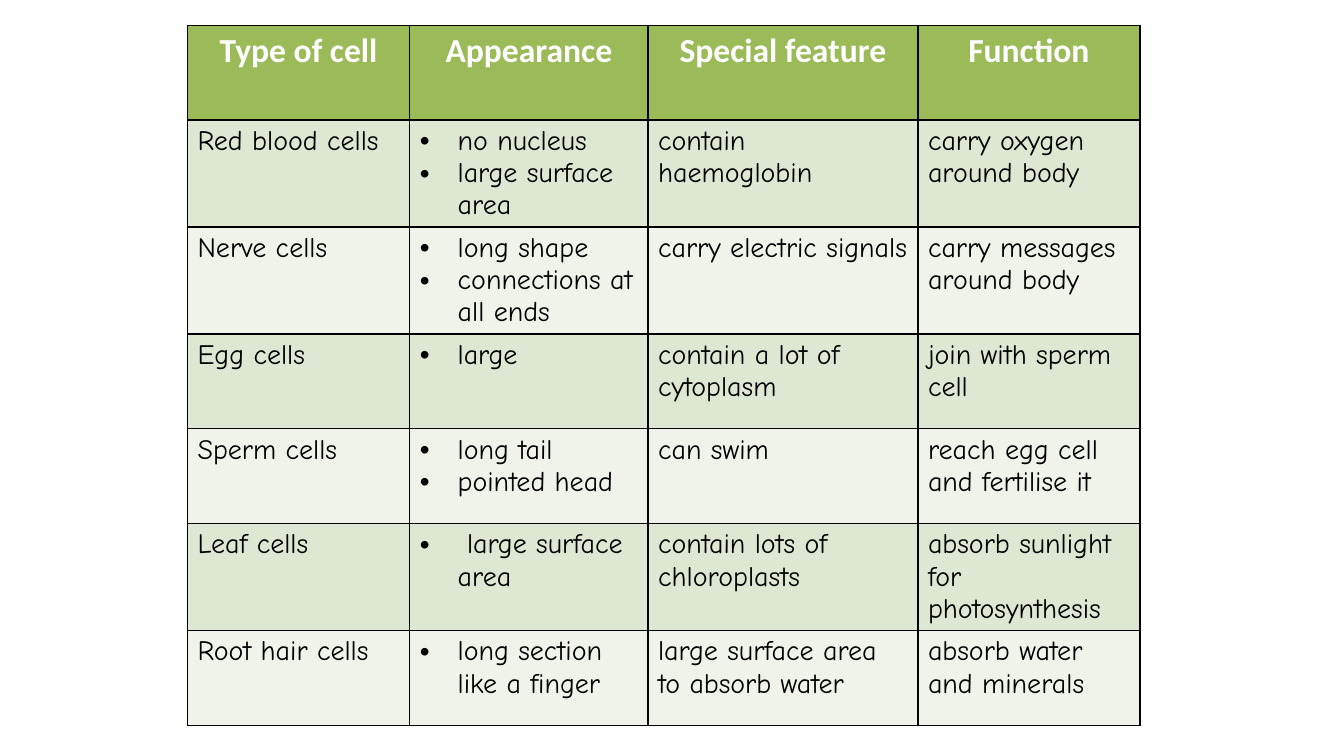
from lxml.etree import SubElement
from pptx import Presentation
from pptx.dml.color import RGBColor
from pptx.enum.text import PP_ALIGN as Align
from pptx.oxml.ns import qn
from pptx.util import Pt

# Content: a list in a cell is a bulleted list
HEADINGS = ["Type of cell", "Appearance", "Special feature", "Function"]
CELL_TYPES = [
    ("Red blood cells", ["no nucleus", "large surface area"],
     "contain haemoglobin", "carry oxygen around body"),
    ("Nerve cells", ["long shape", "connections at all ends"],
     "carry electric signals", "carry messages around body"),
    ("Egg cells", ["large"],
     "contain a lot of cytoplasm", "join with sperm cell"),
    ("Sperm cells", ["long tail", "pointed head"],
     "can swim", "reach egg cell and fertilise it"),
    ("Leaf cells", [" large surface area"],
     "contain lots of chloroplasts", "absorb sunlight for photosynthesis"),
    ("Root hair cells", ["long section like a finger"],
     "large surface area to absorb water", "absorb water and minerals"),
]

COLORS = {"heading": "9BBB59", "odd": "DEE7D1", "even": "EFF3EA",
          "border": "000000", "text": "000000", "heading text": "FFFFFF"}
LEFT, TOP = 133.9, 18
COLUMN_WIDTHS = [158.8, 170.2, 192.8, 158.6]
ROW_HEIGHT = 67.8
BULLET_INDENT = 27


def add_borders(cell):
    properties = cell._tc.get_or_add_tcPr()
    for position, side in enumerate(("a:lnL", "a:lnR", "a:lnT", "a:lnB")):
        line = SubElement(properties, qn(side), w=str(Pt(1)))
        fill = SubElement(line, qn("a:solidFill"))
        SubElement(fill, qn("a:srgbClr"), val=COLORS["border"])
        properties.insert(position, line)


def add_bullet(paragraph):
    properties = paragraph._p.get_or_add_pPr()
    properties.set("marL", str(Pt(BULLET_INDENT)))
    properties.set("indent", str(-Pt(BULLET_INDENT)))
    SubElement(properties, qn("a:buFont"), typeface="Arial")
    SubElement(properties, qn("a:buChar"), char="•")


def fill_cell(cell, content, fill, is_heading):
    cell.fill.solid()
    cell.fill.fore_color.rgb = RGBColor.from_string(COLORS[fill])
    add_borders(cell)
    bulleted = isinstance(content, list)
    frame = cell.text_frame
    for index, text in enumerate(content if bulleted else [content]):
        paragraph = frame.add_paragraph() if index else frame.paragraphs[0]
        if bulleted:
            add_bullet(paragraph)
        paragraph.alignment = Align.CENTER if is_heading else Align.LEFT
        run = paragraph.add_run()
        run.text = text
        font = run.font
        font.name = "Calibri" if is_heading else "Comic Neue"
        font.size = Pt(24 if is_heading else 20)
        font.bold = is_heading
        font.color.rgb = RGBColor.from_string(
            COLORS["heading text" if is_heading else "text"])


presentation = Presentation()
presentation.slide_width, presentation.slide_height = Pt(960), Pt(540)
slide = presentation.slides.add_slide(presentation.slide_layouts[6])

# Table grid
rows = [HEADINGS, *CELL_TYPES]
table = slide.shapes.add_table(
    len(rows), len(HEADINGS), Pt(LEFT), Pt(TOP),
    Pt(sum(COLUMN_WIDTHS)), Pt(ROW_HEIGHT * len(rows))).table
for column, width in zip(table.columns, COLUMN_WIDTHS):
    column.width = Pt(width)

# Headings, then banded rows
for row_index, contents in enumerate(rows):
    table.rows[row_index].height = Pt(ROW_HEIGHT)
    fill = "heading" if row_index == 0 else "odd" if row_index % 2 else "even"
    for column_index, content in enumerate(contents):
        fill_cell(table.cell(row_index, column_index), content, fill,
                  row_index == 0)

presentation.save("out.pptx")
